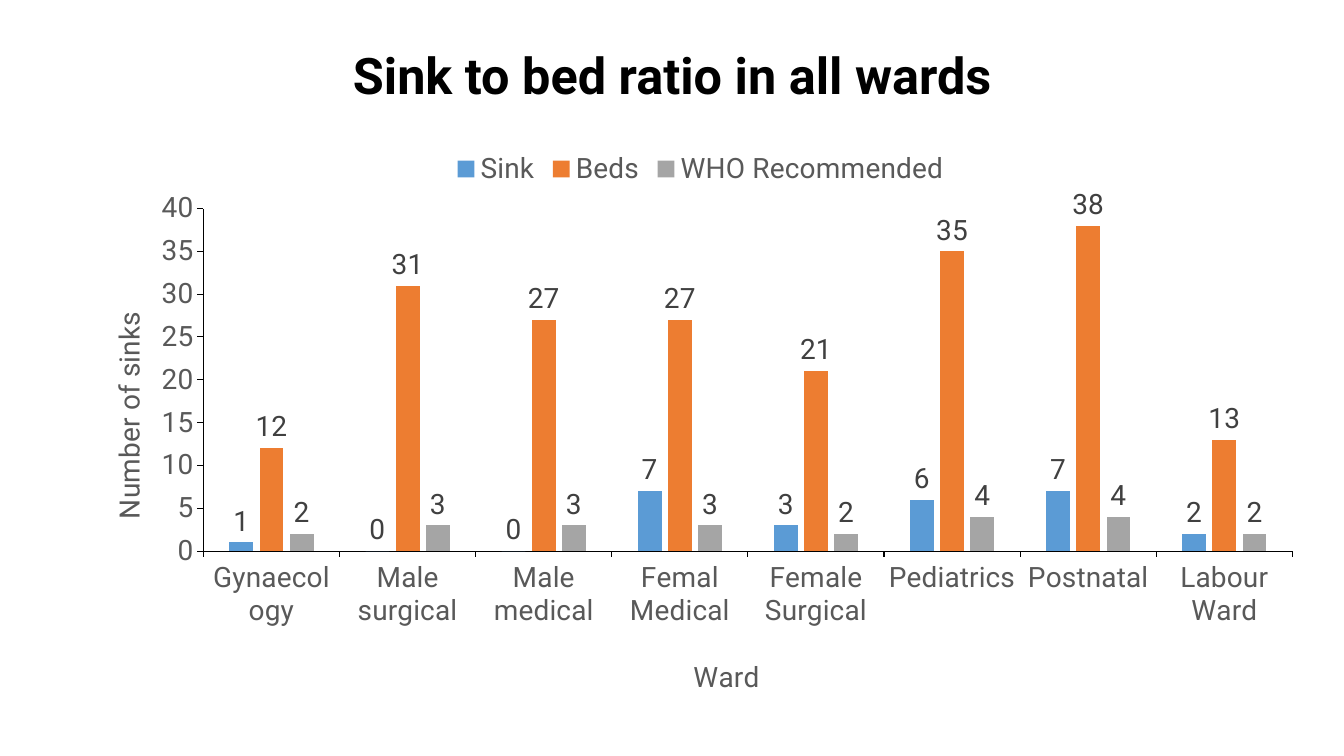
from lxml.etree import SubElement
from pptx import Presentation
from pptx.chart.data import CategoryChartData
from pptx.dml.color import RGBColor
from pptx.enum.chart import XL_CHART_TYPE as ChartType
from pptx.enum.chart import XL_LABEL_POSITION as LabelPos
from pptx.enum.chart import XL_LEGEND_POSITION as LegendPos
from pptx.enum.chart import XL_TICK_MARK as Tick
from pptx.enum.text import MSO_ANCHOR, PP_ALIGN
from pptx.oxml.ns import qn
from pptx.util import Cm, Pt

FONT = "Roboto"
BLACK = RGBColor(0x00, 0x00, 0x00)
GREY = RGBColor(0x59, 0x59, 0x59)
LABEL_GREY = RGBColor(0x40, 0x40, 0x40)
BLUE = RGBColor(0x5B, 0x9B, 0xD5)
ORANGE = RGBColor(0xED, 0x7D, 0x31)
SILVER = RGBColor(0xA5, 0xA5, 0xA5)

WARDS = ["Gynaecology", "Male surgical", "Male medical", "Femal Medical",
         "Female Surgical", "Pediatrics", "Postnatal", "Labour Ward"]
SERIES = [
    ("Sink", BLUE, [1, 0, 0, 7, 3, 6, 7, 2]),
    ("Beds", ORANGE, [12, 31, 27, 27, 21, 35, 38, 13]),
    ("WHO Recommended", SILVER, [2, 3, 3, 3, 2, 4, 4, 2]),
]


def style_font(font, color, size=20, bold=False):
    font.name = FONT
    font.size = Pt(size)
    font.bold = bold
    font.color.rgb = color


def set_layout(parent, index, **settings):
    """Give a chart part a manual layout, as fractions of the chart."""
    for old in parent.findall(qn("c:layout")):
        parent.remove(old)
    layout = SubElement(parent, qn("c:layout"))
    parent.insert(index, layout)
    manual = SubElement(layout, qn("c:manualLayout"))
    for tag, value in settings.items():
        SubElement(manual, qn(f"c:{tag}")).set("val", str(value))


def add_title(slide, text, left, top, width, height):
    tf = slide.shapes.add_textbox(left, top, width, height).text_frame
    tf.word_wrap = True
    tf.vertical_anchor = MSO_ANCHOR.MIDDLE
    tf.text = text
    p = tf.paragraphs[0]
    p.alignment = PP_ALIGN.CENTER
    p.line_spacing = 0.9
    style_font(p.runs[0].font, BLACK, size=36, bold=True)


def style_axis(axis, title, x, y, rotation):
    axis.has_major_gridlines = False
    axis.major_tick_mark = Tick.OUTSIDE
    axis.minor_tick_mark = Tick.NONE
    axis.format.line.color.rgb = BLACK
    axis.format.line.width = Pt(0.75)
    style_font(axis.tick_labels.font, GREY)
    tf = axis.axis_title.text_frame
    tf.text = title
    style_font(tf.paragraphs[0].runs[0].font, GREY)
    element = axis.axis_title._element
    body = element.find(".//" + qn("a:bodyPr"))
    body.set("rot", str(rotation * 60000))
    body.set("vert", "horz")
    set_layout(element, 1, xMode="edge", yMode="edge", x=x, y=y)


def add_ward_chart(slide, left, top, width, height):
    data = CategoryChartData()
    data.categories = WARDS
    for name, _, values in SERIES:
        data.add_series(name, values)
    chart = slide.shapes.add_chart(
        ChartType.COLUMN_CLUSTERED, left, top, width, height, data).chart
    style_font(chart.font, BLACK)
    chart.has_title = False
    chart.has_legend = True
    chart.legend.position = LegendPos.TOP
    chart.legend.include_in_layout = False
    style_font(chart.legend.font, GREY)

    plot = chart.plots[0]
    plot.gap_width = 219
    plot.overlap = -27
    plot.vary_by_categories = False
    for series, (_, color, _) in zip(plot.series, SERIES):
        series.invert_if_negative = False
        series.format.fill.solid()
        series.format.fill.fore_color.rgb = color
        labels = series.data_labels
        labels.show_value = True
        labels.position = LabelPos.OUTSIDE_END
        style_font(labels.font, LABEL_GREY)

    style_axis(chart.category_axis, "Ward", 0.49, 0.86, rotation=0)
    style_axis(chart.value_axis, "Number of sinks", 0.01, 0.28, rotation=-90)
    chart.value_axis.minimum_scale = 0
    chart.value_axis.maximum_scale = 40
    chart.value_axis.major_unit = 5
    plot_area = chart._chartSpace.find(".//" + qn("c:plotArea"))
    set_layout(plot_area, 0, layoutTarget="inner", xMode="edge", yMode="edge",
               x=0.091, y=0.116, w=0.896, h=0.574)


def main():
    prs = Presentation()
    prs.slide_width, prs.slide_height = Cm(33.87), Cm(19.05)
    slide = prs.slides.add_slide(prs.slide_layouts[6])
    add_title(slide, "Sink to bed ratio in all wards",
              Cm(2.34), Cm(1.02), Cm(29.21), Cm(1.88))
    add_ward_chart(slide, Cm(2.34), Cm(3.51), Cm(30.63), Cm(15.04))
    prs.save("out.pptx")


if __name__ == "__main__":
    main()
